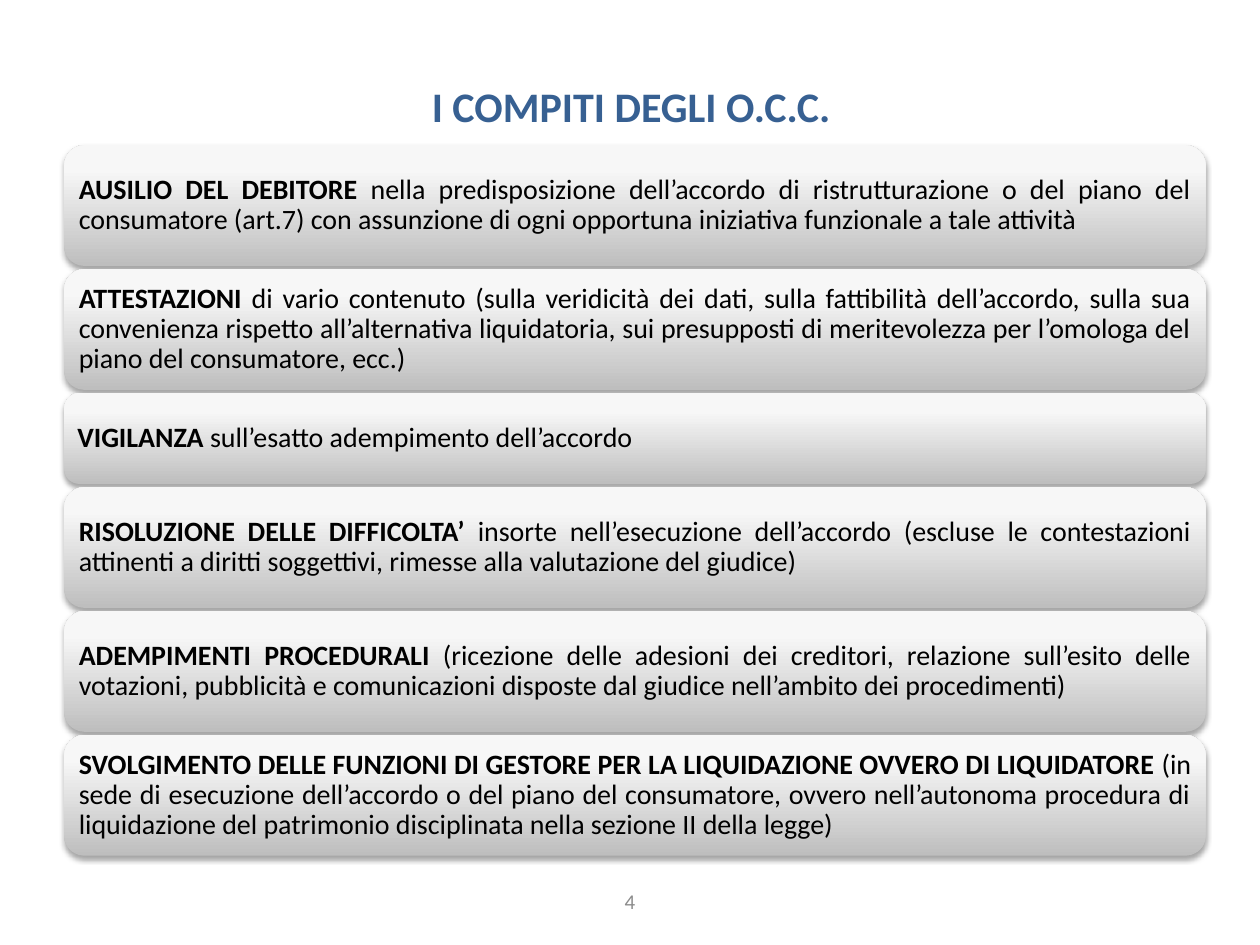
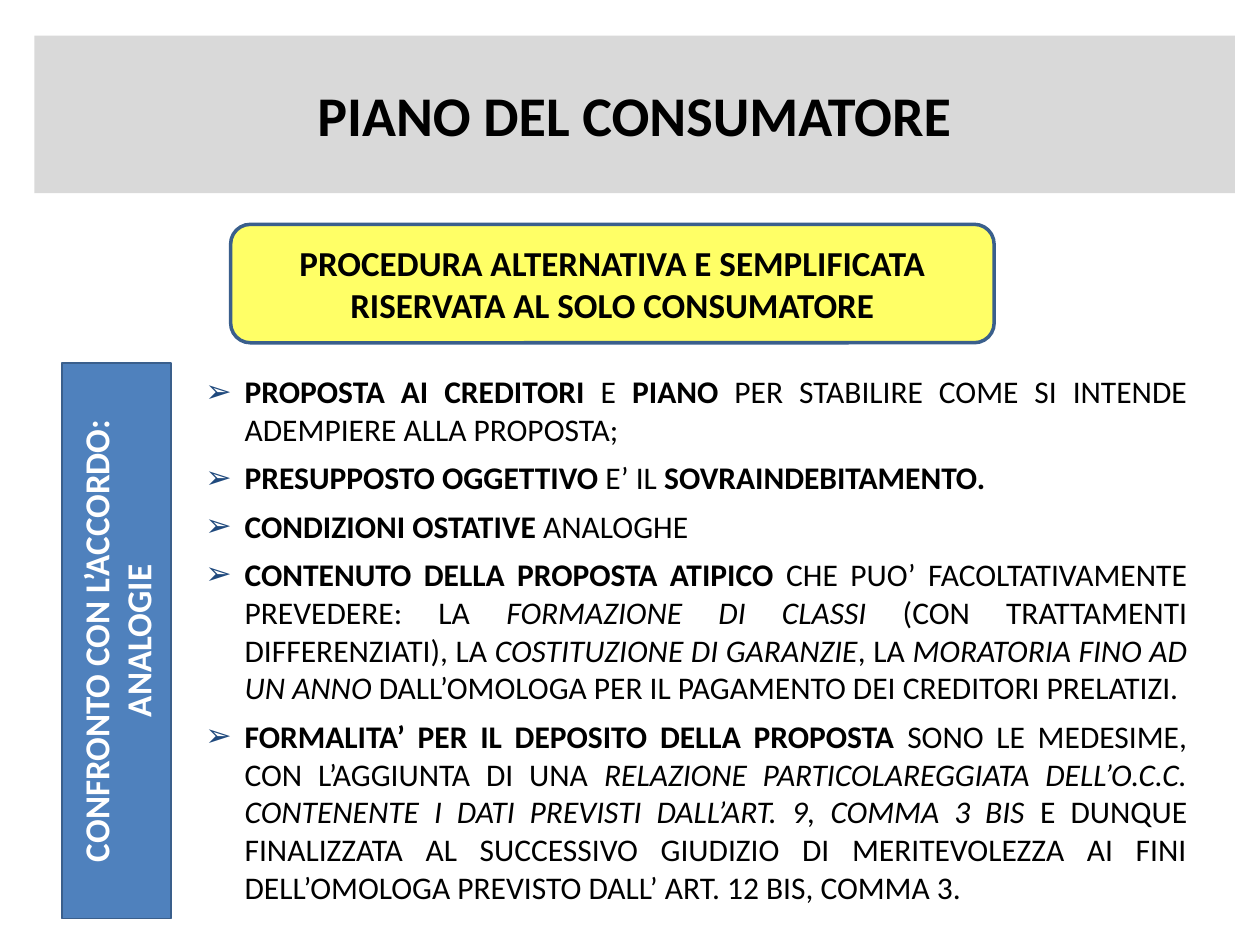
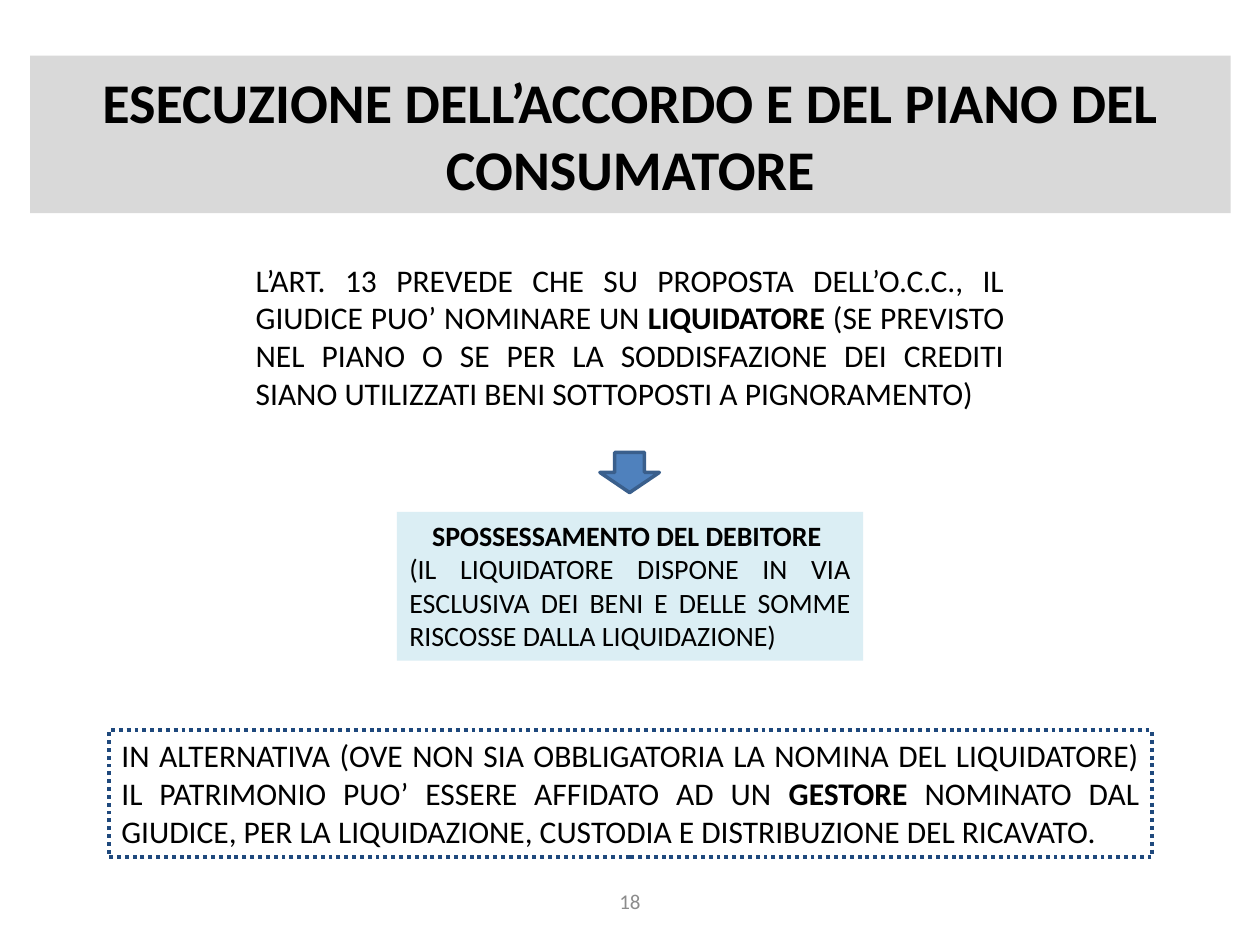
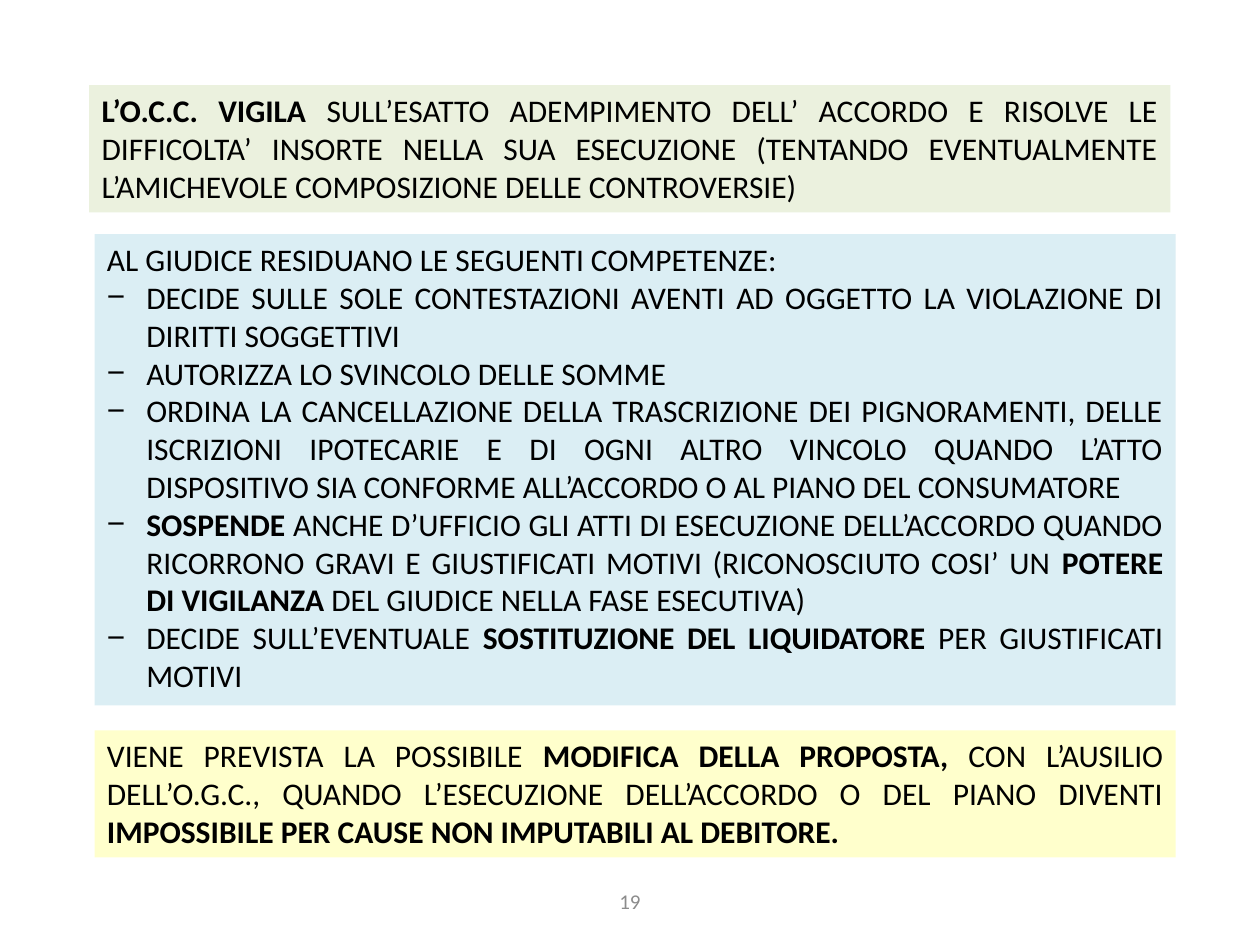
from dataclasses import dataclass
from typing import Optional

from lxml import etree
from pptx import Presentation
from pptx.dml.color import RGBColor
from pptx.enum import dml, shapes, text as tx
from pptx.oxml import ns
from pptx.util import Pt

FONT = "Calibri"
HUES = {
    "black": "000000", "white": "FFFFFF", "head": "376092", "page": "8C8C8C",
    "band": "D9D9D9", "blue": "4F81BD", "edge": "3A5F8C", "navy": "1F497D",
    "lemon": "FFFF66", "cream": "FFFFCC", "aqua": "DBEEF4", "sage": "EBF1DE",
    "dark": "BEBEBE", "light": "F7F7F7",
}
RECT = shapes.MSO_SHAPE.RECTANGLE
ROUND = shapes.MSO_SHAPE.ROUNDED_RECTANGLE
ARROW = shapes.MSO_SHAPE.DOWN_ARROW
ALIGNS = {"l": tx.PP_ALIGN.LEFT, "c": tx.PP_ALIGN.CENTER, "j": tx.PP_ALIGN.JUSTIFY}
INDENT = 22.5


@dataclass
class Box:
    """A shape, or a plain text box when it has no kind; lengths in points."""
    left: float
    top: float
    width: float
    height: float
    kind: Optional[shapes.MSO_SHAPE] = RECT
    fill: Optional[str] = None
    edge: Optional[str] = None
    weight: float = 2
    dotted: bool = False


@dataclass
class Para:
    """Text with *bold*, ~italic~ and _underlined_ parts."""
    text: str
    align: str = "j"
    mark: Optional[str] = None


def rgb(hue: str) -> RGBColor:
    return RGBColor.from_string(HUES[hue])


def node(parent, tag: str, **attrs: str):
    item = etree.SubElement(parent, ns.qn(tag))
    for name, value in attrs.items():
        item.set(name, value)
    return item


def draw(slide, box: Box):
    place = [Pt(n) for n in (box.left, box.top, box.width, box.height)]
    if box.kind is None:
        return slide.shapes.add_textbox(*place)
    shape = slide.shapes.add_shape(box.kind, *place)
    shape.shadow.inherit = False
    if box.fill:
        shape.fill.solid()
        shape.fill.fore_color.rgb = rgb(box.fill)
    else:
        shape.fill.background()
    if box.edge:
        shape.line.color.rgb = rgb(box.edge)
        shape.line.width = Pt(box.weight)
        if box.dotted:
            shape.line.dash_style = dml.MSO_LINE.ROUND_DOT
    else:
        shape.line.fill.background()
    return shape


def bullet(line, mark: str, hue: str) -> None:
    props = line._p.get_or_add_pPr()
    props.set("marL", str(Pt(INDENT)))
    props.set("indent", str(-Pt(INDENT)))
    node(node(props, "a:buClr"), "a:srgbClr", val=HUES[hue])
    node(props, "a:buFont", typeface="Arial")
    node(props, "a:buChar", char=mark)


def write(shape, *paras: Para, size: float = 18, hue: str = "black",
          anchor=tx.MSO_ANCHOR.TOP, before: float = 0, lead: Optional[float] = None,
          mark_hue: str = "black", inset: Optional[float] = None) -> None:
    frame = shape.text_frame
    frame.word_wrap = True
    frame.vertical_anchor = anchor
    if inset is not None:
        frame.margin_left = frame.margin_right = Pt(inset)
        frame.margin_top = frame.margin_bottom = Pt(inset)
    for i, para in enumerate(paras):
        line = frame.add_paragraph() if i else frame.paragraphs[0]
        line.alignment = ALIGNS[para.align]
        if lead:
            line.line_spacing = lead
        if before and i:
            line.space_before = Pt(before)
        if para.mark:
            bullet(line, para.mark, mark_hue)
        for b, thick in enumerate(para.text.split("*")):
            for s, slant in enumerate(thick.split("~")):
                for n, part in enumerate(slant.split("_")):
                    if not part:
                        continue
                    run = line.add_run()
                    run.text = part
                    font = run.font
                    font.name, font.size, font.color.rgb = FONT, Pt(size), rgb(hue)
                    font.bold, font.italic = b % 2 == 1, s % 2 == 1
                    font.underline = n % 2 == 1


def panel(slide, box: Box, *paras: Para, **style):
    shape = draw(slide, box)
    write(shape, *paras, **style)
    return shape


def centre(slide, box: Box, *lines: str, **style):
    return panel(slide, box, *(Para(line, "c") for line in lines),
                 anchor=tx.MSO_ANCHOR.MIDDLE, **style)


def band(slide, title: str, left: float, top: float) -> None:
    centre(slide, Box(left, top, 686, 90, fill="band"), f"*{title}*", size=32)


def page(slide, number: int) -> None:
    centre(slide, Box(246, 500.4, 228, 28.8, None), str(number), size=12, hue="page")


def gloss(shape) -> None:
    """Give a shape a grey gradient and a soft shadow below."""
    shape.fill.gradient()
    shape.fill.gradient_angle = 90
    low, high = shape.fill.gradient_stops
    low.color.rgb, high.color.rgb = rgb("dark"), rgb("light")
    high.position = 0.8
    effects = shape._element.spPr.find(ns.qn("a:effectLst"))
    shade = node(effects, "a:outerShdw", blurRad=str(Pt(3.1)), dist=str(Pt(1.8)),
                 dir="5400000", rotWithShape="0")
    node(node(shade, "a:srgbClr", val=HUES["black"]), "a:alpha", val="35000")


TASKS = [
    Para("*AUSILIO DEL DEBITORE *nella predisposizione dell’accordo di ristrutturazione o del "
         "piano del consumatore (art.7) con assunzione di ogni opportuna iniziativa funzionale "
         "a tale attività"),
    Para("*ATTESTAZIONI* di vario contenuto (sulla veridicità dei dati, sulla fattibilità "
         "dell’accordo, sulla sua convenienza rispetto all’alternativa liquidatoria, sui "
         "presupposti di meritevolezza per l’omologa del piano del consumatore, ecc.)"),
    Para("*VIGILANZA* sull’esatto adempimento dell’accordo", "l"),
    Para("*RISOLUZIONE DELLE DIFFICOLTA’ *insorte nell’esecuzione dell’accordo (escluse le "
         "contestazioni attinenti a diritti soggettivi, rimesse alla valutazione del giudice)"),
    Para("*ADEMPIMENTI PROCEDURALI *(ricezione delle adesioni dei creditori, relazione "
         "sull’esito delle votazioni, pubblicità e comunicazioni disposte dal giudice "
         "nell’ambito dei procedimenti)"),
    Para("*SVOLGIMENTO DELLE FUNZIONI DI GESTORE PER LA LIQUIDAZIONE OVVERO DI LIQUIDATORE *"
         "(in sede di esecuzione dell’accordo o del piano del consumatore, ovvero nell’autonoma "
         "procedura di liquidazione del patrimonio disciplinata nella sezione II della legge)"),
]
LIKES = [
    "*PROPOSTA AI CREDITORI *E *PIANO *PER STABILIRE COME SI INTENDE ADEMPIERE ALLA PROPOSTA;",
    "*PRESUPPOSTO OGGETTIVO *E’ IL *SOVRAINDEBITAMENTO.*",
    "*CONDIZIONI OSTATIVE *ANALOGHE",
    "*CONTENUTO DELLA PROPOSTA ATIPICO* CHE PUO’ FACOLTATIVAMENTE PREVEDERE: LA ~FORMAZIONE DI "
    "CLASSI~ (CON TRATTAMENTI DIFFERENZIATI), LA ~COSTITUZIONE DI GARANZIE~, LA ~MORATORIA FINO "
    "AD UN ANNO ~DALL’OMOLOGA PER IL PAGAMENTO DEI CREDITORI PRELATIZI.",
    "*FORMALITA’ PER IL DEPOSITO DELLA PROPOSTA *SONO LE MEDESIME, CON L’AGGIUNTA DI UNA "
    "~RELAZIONE PARTICOLAREGGIATA DELL’O.C.C.~_ _~CONTENENTE I DATI PREVISTI DALL’ART. 9, COMMA "
    "3 BIS~ E DUNQUE FINALIZZATA AL SUCCESSIVO GIUDIZIO DI MERITEVOLEZZA AI FINI DELL’OMOLOGA "
    "PREVISTO DALL’ ART. 12 BIS, COMMA 3.",
]
POWERS = [
    "DECIDE SULLE SOLE CONTESTAZIONI AVENTI AD OGGETTO LA VIOLAZIONE DI DIRITTI SOGGETTIVI",
    "AUTORIZZA LO SVINCOLO DELLE SOMME",
    "ORDINA LA CANCELLAZIONE DELLA TRASCRIZIONE DEI PIGNORAMENTI, DELLE ISCRIZIONI IPOTECARIE E "
    "DI OGNI ALTRO VINCOLO QUANDO L’ATTO DISPOSITIVO SIA CONFORME ALL’ACCORDO O AL PIANO DEL "
    "CONSUMATORE",
    "*SOSPENDE *ANCHE D’UFFICIO GLI ATTI DI ESECUZIONE DELL’ACCORDO QUANDO RICORRONO GRAVI E "
    "GIUSTIFICATI MOTIVI (RICONOSCIUTO COSI’ UN *POTERE DI VIGILANZA *DEL GIUDICE NELLA FASE "
    "ESECUTIVA)",
    "DECIDE SULL’EVENTUALE *SOSTITUZIONE DEL LIQUIDATORE *PER GIUSTIFICATI MOTIVI",
]


def tasks(slide) -> None:
    centre(slide, Box(36.7, 15.1, 648, 90, None), "*I COMPITI DEGLI O.C.C.*",
           size=24, hue="head")
    top, gap = 83, 1.8
    for task in TASKS:
        height = 52 if task.align == "l" else 69
        bar = panel(slide, Box(36.7, top, 652.3, height, ROUND), task, size=16,
                    anchor=tx.MSO_ANCHOR.MIDDLE, lead=0.9, inset=5)
        gloss(bar)
        top += height + gap
    page(slide, 4)


def plan(slide) -> None:
    band(slide, "PIANO DEL CONSUMATORE", 19.6, 20.4)
    centre(slide, Box(131.8, 128.2, 436.3, 67.7, ROUND, "lemon", "edge"),
           "*PROCEDURA ALTERNATIVA E SEMPLIFICATA RISERVATA AL SOLO CONSUMATORE*", size=20)
    side = centre(slide, Box(35.3, 207.4, 62.6, 317.5, RECT, "blue", "edge", 1),
                  "*CONFRONTO CON L’ACCORDO:*", "*ANALOGIE*", size=20, hue="white")
    side.text_frame._txBody.bodyPr.set("vert", "vert270")
    panel(slide, Box(110.2, 207.4, 575.3, 315.4, None), *(Para(t, mark="➢") for t in LIKES),
          anchor=tx.MSO_ANCHOR.MIDDLE, before=6, mark_hue="navy")


def action(slide) -> None:
    band(slide, "ESECUZIONE DELL’ACCORDO E DEL PIANO DEL CONSUMATORE", 17.2, 31.8)
    panel(slide, Box(139, 145.4, 442, 94.3, None),
          Para("L’ART. 13 PREVEDE CHE SU PROPOSTA DELL’O.C.C., IL GIUDICE PUO’ NOMINARE UN "
               "*LIQUIDATORE *(SE PREVISTO NEL PIANO O SE PER LA SODDISFAZIONE DEI CREDITI "
               "SIANO UTILIZZATI BENI SOTTOPOSTI A PIGNORAMENTO)"))
    draw(slide, Box(342.8, 258.5, 34, 23, ARROW, "blue", "edge"))
    panel(slide, Box(226.8, 292.5, 266.4, 85, fill="aqua"),
          Para("*SPOSSESSAMENTO DEL DEBITORE *", "c"),
          Para("(IL LIQUIDATORE DISPONE IN VIA ESCLUSIVA DEI BENI E DELLE SOMME RISCOSSE "
               "DALLA LIQUIDAZIONE)"), size=16)
    panel(slide, Box(62.3, 417.3, 595.8, 72.7, edge="navy", weight=2.25, dotted=True),
          Para("IN ALTERNATIVA (OVE NON SIA OBBLIGATORIA LA NOMINA DEL LIQUIDATORE) IL "
               "PATRIMONIO PUO’ ESSERE AFFIDATO AD UN *GESTORE *NOMINATO DAL GIUDICE, PER LA "
               "LIQUIDAZIONE, CUSTODIA E DISTRIBUZIONE DEL RICAVATO."))
    page(slide, 18)


def roles(slide) -> None:
    panel(slide, Box(51, 48.7, 617.8, 72.7, fill="sage"),
          Para("*L’O.C.C. VIGILA *SULL’ESATTO ADEMPIMENTO DELL’ ACCORDO E RISOLVE LE "
               "DIFFICOLTA’ INSORTE NELLA SUA ESECUZIONE (TENTANDO EVENTUALMENTE "
               "L’AMICHEVOLE COMPOSIZIONE DELLE CONTROVERSIE)"))
    panel(slide, Box(54, 133.8, 617.8, 269.3, fill="aqua"),
          Para("AL GIUDICE RESIDUANO LE SEGUENTI COMPETENZE:", "l"),
          *(Para(t, mark="−") for t in POWERS))
    panel(slide, Box(54, 417.3, 617.8, 72.7, fill="cream"),
          Para("VIENE PREVISTA LA POSSIBILE *MODIFICA DELLA PROPOSTA,* CON L’AUSILIO "
               "DELL’O.G.C., QUANDO L’ESECUZIONE DELL’ACCORDO O DEL PIANO DIVENTI "
               "*IMPOSSIBILE PER CAUSE NON IMPUTABILI AL DEBITORE.*"))
    page(slide, 19)


def main() -> None:
    deck = Presentation()
    deck.slide_width, deck.slide_height = Pt(720), Pt(540)
    for build in (tasks, plan, action, roles):
        build(deck.slides.add_slide(deck.slide_layouts[6]))
    deck.save("out.pptx")


if __name__ == "__main__":
    main()
